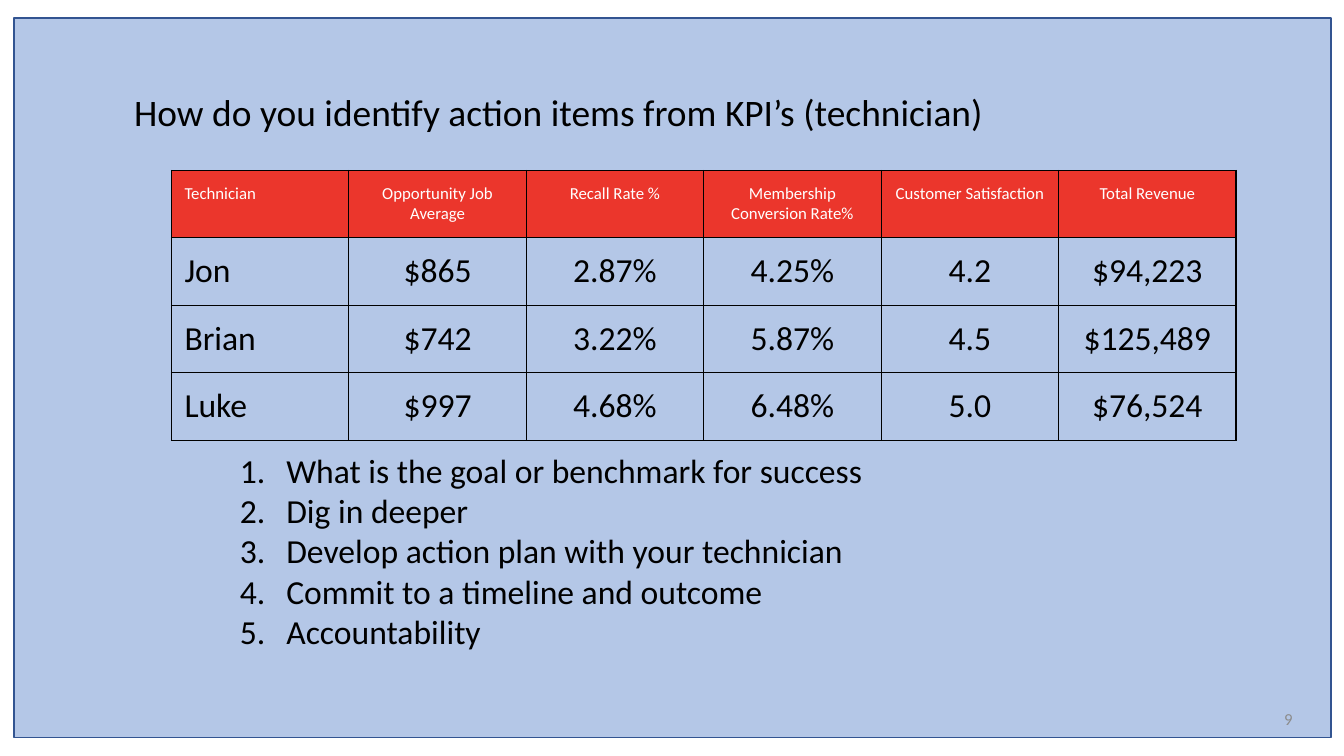
from dataclasses import dataclass

from lxml.etree import SubElement
from pptx import Presentation
from pptx.dml.color import RGBColor
from pptx.enum.shapes import MSO_SHAPE as Shape
from pptx.enum.text import PP_ALIGN as Align
from pptx.oxml.ns import qn
from pptx.util import Inches, Pt

FONT = "Calibri"
BLACK, WHITE, GREY = "000000", "FFFFFF", "8C8C8C"
RED, PALE_BLUE, NAVY = "EB362C", "B4C7E7", "325491"
INSET = Inches(0.13)


@dataclass
class TextBlock:
    left: float
    top: float
    width: float
    height: float
    lines: list[str]
    size: float
    color: str = BLACK
    align: Align = Align.LEFT
    spacing: float = 1.0
    numbered: bool = False


HEADINGS = ["Technician", "Opportunity Job Average", "Recall Rate %",
            "Membership Conversion Rate%", "Customer Satisfaction", "Total Revenue"]
TECHNICIANS = [
    ["Jon", "$865", "2.87%", "4.25%", "4.2", "$94,223"],
    ["Brian", "$742", "3.22%", "5.87%", "4.5", "$125,489"],
    ["Luke", "$997", "4.68%", "6.48%", "5.0", "$76,524"],
]
ACTION_STEPS = [
    "What is the goal or benchmark for success",
    "Dig in deeper",
    "Develop action plan with your technician",
    "Commit to a timeline and outcome",
    "Accountability",
]
TEXT_BLOCKS = [
    TextBlock(12.15, 6.93, 0.8, 0.39, ["9"], 12, GREY, Align.RIGHT),
    TextBlock(1.2, 0.8, 9.71, 0.89,
              ["How do you identify action items from KPI’s (technician)"],
              26.7, spacing=0.9),
    TextBlock(2.04, 4.33, 9.97, 1.9, ACTION_STEPS, 24, numbered=True),
]


def rgb(color: str) -> RGBColor:
    return RGBColor.from_string(color)


def write(paragraph, text: str, *, size: float, color: str = BLACK,
          align: Align = Align.LEFT, spacing: float = 1.0) -> None:
    paragraph.alignment = align
    paragraph.line_spacing = spacing
    run = paragraph.add_run()
    run.text = text
    run.font.name = FONT
    run.font.size = Pt(size)
    run.font.bold = False
    run.font.color.rgb = rgb(color)


def number(paragraph) -> None:
    """Give the paragraph a hanging indent and an automatic number."""
    props = paragraph._p.get_or_add_pPr()
    props.set("marL", str(Inches(0.67)))
    props.set("indent", str(Inches(-0.46)))
    SubElement(props, qn("a:buFont"), typeface=FONT)
    SubElement(props, qn("a:buAutoNum"), type="arabicPeriod")


def set_insets(holder) -> None:
    holder.margin_left = holder.margin_right = INSET
    holder.margin_top = holder.margin_bottom = INSET


def add_text(slide, block: TextBlock) -> None:
    frame = slide.shapes.add_textbox(
        Inches(block.left), Inches(block.top),
        Inches(block.width), Inches(block.height)).text_frame
    frame.word_wrap = True
    set_insets(frame)
    for index, line in enumerate(block.lines):
        paragraph = frame.add_paragraph() if index else frame.paragraphs[0]
        write(paragraph, line, size=block.size, color=block.color,
              align=block.align, spacing=block.spacing)
        if block.numbered:
            number(paragraph)


def add_borders(cell) -> None:
    props = cell._tc.get_or_add_tcPr()
    for position, side in enumerate(("lnL", "lnR", "lnT", "lnB")):
        line = props.makeelement(qn(f"a:{side}"), {"w": str(Pt(1))})
        fill = SubElement(line, qn("a:solidFill"))
        SubElement(fill, qn("a:srgbClr"), val=BLACK)
        props.insert(position, line)


def add_kpi_table(slide) -> None:
    rows = [HEADINGS, *TECHNICIANS]
    table = slide.shapes.add_table(
        len(rows), len(HEADINGS), Inches(1.7), Inches(1.69),
        Inches(10.56), Inches(2.68)).table
    table.horz_banding = False
    for row_index, values in enumerate(rows):
        is_header = row_index == 0
        for column_index, value in enumerate(values):
            cell = table.cell(row_index, column_index)
            set_insets(cell)
            if is_header:
                cell.fill.solid()
                cell.fill.fore_color.rgb = rgb(RED)
            else:
                cell.fill.background()
            add_borders(cell)
            write(cell.text_frame.paragraphs[0], value,
                  size=12 if is_header else 24,
                  color=WHITE if is_header else BLACK,
                  align=Align.CENTER if column_index else Align.LEFT)


def add_panel(slide) -> None:
    panel = slide.shapes.add_shape(
        Shape.RECTANGLE, Inches(0.14), Inches(0.18), Inches(13.06), Inches(7.14))
    panel.shadow.inherit = False
    panel.fill.solid()
    panel.fill.fore_color.rgb = rgb(PALE_BLUE)
    panel.line.color.rgb = rgb(NAVY)
    panel.line.width = Pt(1)


def main() -> None:
    deck = Presentation()
    deck.slide_width, deck.slide_height = Inches(13.33), Inches(7.5)
    slide = deck.slides.add_slide(deck.slide_layouts[6])
    add_panel(slide)
    add_kpi_table(slide)
    for block in TEXT_BLOCKS:
        add_text(slide, block)
    deck.save("out.pptx")


if __name__ == "__main__":
    main()
